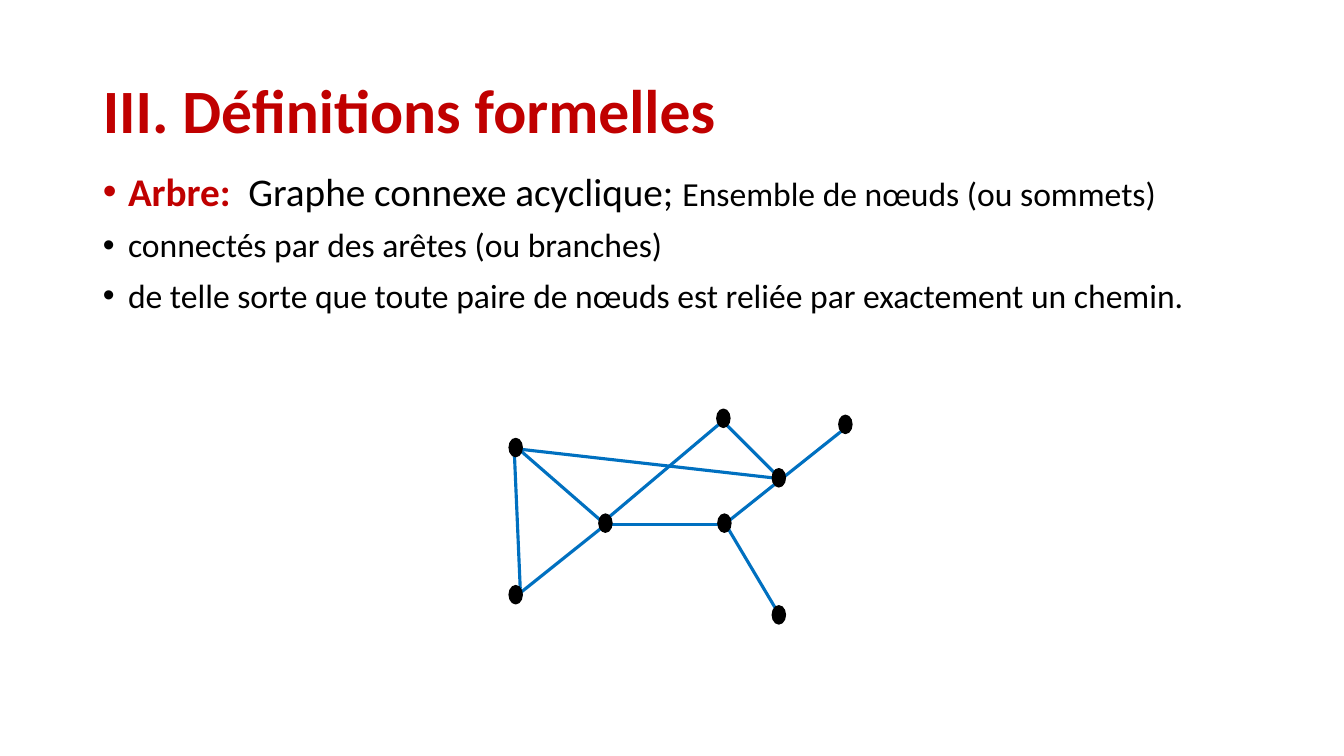
import pptx
import pptx.util
import pptx.dml.color
import pptx.enum.shapes
import pptx.enum.text
import pptx.oxml.ns
import lxml.etree

Inches = pptx.util.Inches
Pt = pptx.util.Pt

COLORS = {"accent": "C00000", "text": "000000", "edge": "0070C0", "node": "000000"}
NODE_WIDTH, NODE_HEIGHT = 0.13, 0.18

TITLE = [("III. Définitions formelles", 44, "accent", True)]
DEFINITION = [
    [("Arbre:  ", 28, "accent", True),
     ("Graphe connexe acyclique; ", 28, "text", False),
     ("Ensemble de nœuds (ou sommets)", 24, "text", False)],
    [("connectés par des arêtes (ou branches)", 24, "text", False)],
    [("de telle sorte que toute paire de nœuds est reliée par exactement un chemin.",
      24, "text", False)],
]

# Left and top of each node
NODES = [(5.05, 4.35), (5.05, 5.81), (5.94, 5.1), (7.12, 5.1),
         (7.11, 4.06), (7.66, 4.65), (8.32, 4.12), (7.66, 6.01)]
# Start x, start y, end x, end y of each edge
EDGES = [(6, 5.2, 7.19, 5.2), (7.19, 5.19, 7.73, 6.1), (5.15, 4.46, 6, 5.2),
         (5.15, 5.89, 6, 5.21), (7.73, 4.74, 7.19, 4.2), (7.2, 5.19, 8.38, 4.25),
         (6.04, 5.13, 7.13, 4.21), (5.16, 5.84, 5.1, 4.46), (5.1, 4.45, 7.66, 4.74)]


def rgb(name):
    return pptx.dml.color.RGBColor.from_string(COLORS[name])


def set_attributes(target, values):
    for name, value in values.items():
        setattr(target, name, value)


def place(holder, left, top, width, height, anchor):
    set_attributes(holder, {"left": Inches(left), "top": Inches(top),
                            "width": Inches(width), "height": Inches(height)})
    set_attributes(holder.text_frame, {"word_wrap": True, "vertical_anchor": anchor,
                                       "auto_size": pptx.enum.text.MSO_AUTO_SIZE.NONE})


def write_paragraph(paragraph, pieces, space_before):
    set_attributes(paragraph, {"alignment": pptx.enum.text.PP_ALIGN.LEFT,
                               "line_spacing": 0.9, "space_before": Pt(space_before)})
    for text, size, color, bold in pieces:
        run = paragraph.add_run()
        run.text = text
        set_attributes(run.font, {"name": "Calibri", "size": Pt(size), "bold": bold})
        run.font.color.rgb = rgb(color)


def add_bullet(paragraph):
    properties = paragraph._p.get_or_add_pPr()
    properties.set("marL", str(Inches(0.25)))
    properties.set("indent", str(-Inches(0.25)))
    for tag, name, value in (("a:buFont", "typeface", "Arial"), ("a:buChar", "char", "•")):
        mark = lxml.etree.SubElement(properties, pptx.oxml.ns.qn(tag))
        mark.set(name, value)


def add_edge(slide, *ends):
    edge = slide.shapes.add_connector(pptx.enum.shapes.MSO_CONNECTOR.STRAIGHT,
                                      *[Inches(end) for end in ends])
    edge.line.color.rgb = rgb("edge")
    edge.line.width = Pt(2.25)
    lxml.etree.SubElement(edge._element.spPr, pptx.oxml.ns.qn("a:effectLst"))


def add_node(slide, left, top):
    node = slide.shapes.add_shape(pptx.enum.shapes.MSO_SHAPE.OVAL, Inches(left), Inches(top),
                                  Inches(NODE_WIDTH), Inches(NODE_HEIGHT))
    node.shadow.inherit = False
    node.fill.solid()
    node.fill.fore_color.rgb = rgb("node")
    node.line.color.rgb = rgb("node")
    node.line.width = Pt(1)


def main():
    presentation = pptx.Presentation()
    set_attributes(presentation, {"slide_width": Inches(13.33), "slide_height": Inches(7.5)})
    slide = presentation.slides.add_slide(presentation.slide_layouts[1])

    # Title
    heading = slide.shapes.title
    place(heading, 0.92, 0.4, 11.5, 1.45, pptx.enum.text.MSO_ANCHOR.MIDDLE)
    write_paragraph(heading.text_frame.paragraphs[0], TITLE, 0)

    # Definition of a tree
    definition = slide.placeholders[1]
    place(definition, 0.92, 1.66, 11.5, 2.29, pptx.enum.text.MSO_ANCHOR.TOP)
    for index, pieces in enumerate(DEFINITION):
        frame = definition.text_frame
        paragraph = frame.add_paragraph() if index else frame.paragraphs[0]
        write_paragraph(paragraph, pieces, 10)
        add_bullet(paragraph)

    # Graph, with the nodes over the edges
    for ends in EDGES:
        add_edge(slide, *ends)
    for left, top in NODES:
        add_node(slide, left, top)

    presentation.save("out.pptx")


if __name__ == "__main__":
    main()
